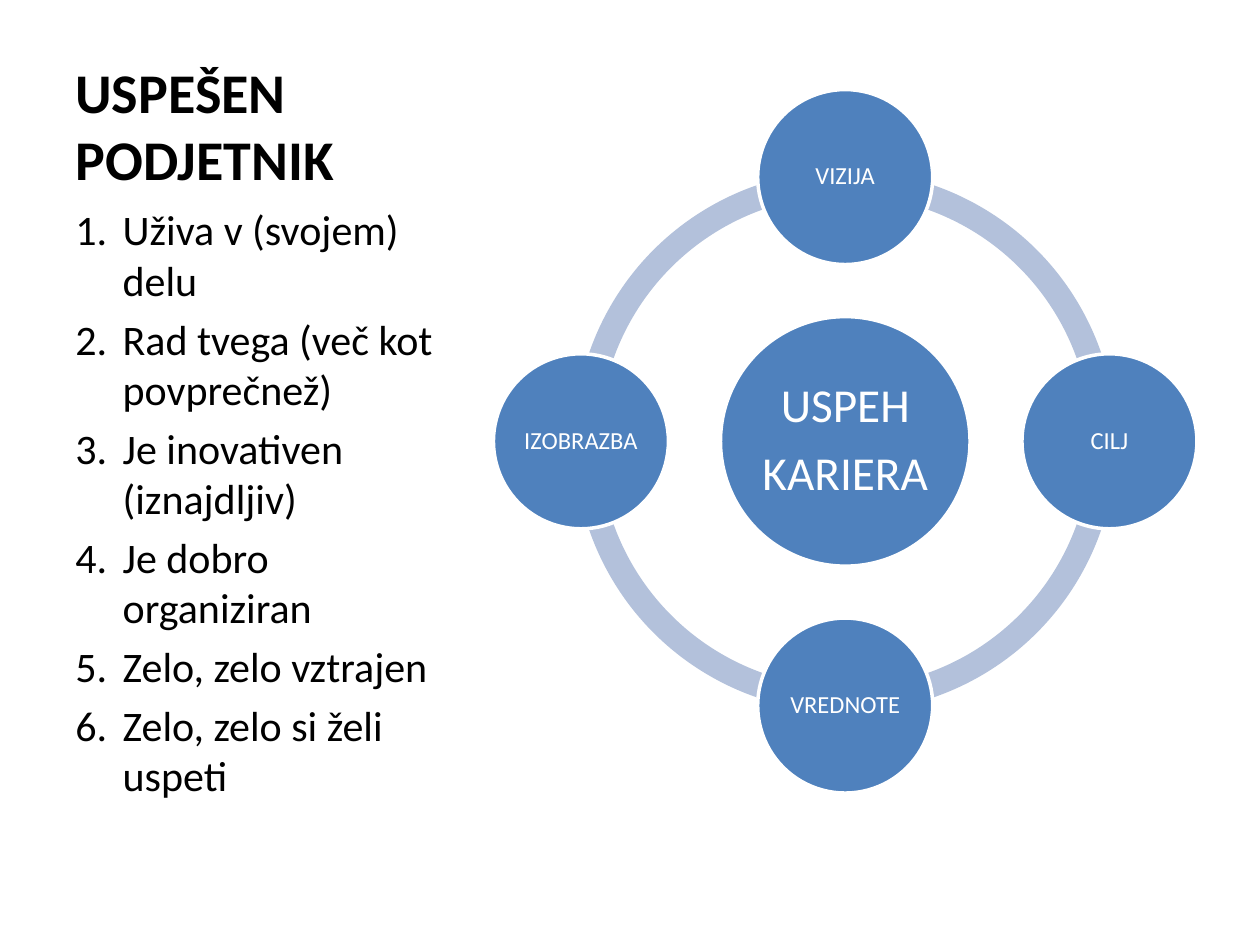
from dataclasses import dataclass
from math import cos, sin, radians

from lxml.etree import SubElement
from pptx import Presentation
from pptx.dml.color import RGBColor as RGB
from pptx.enum.shapes import MSO_SHAPE as SHAPE
from pptx.enum.text import MSO_ANCHOR as ANCHOR, PP_ALIGN as ALIGN
from pptx.oxml.ns import qn
from pptx.util import Pt


@dataclass(frozen=True)
class Theme:
    font: str = "Calibri"
    ink: RGB = RGB(0x00, 0x00, 0x00)
    paper: RGB = RGB(0xFF, 0xFF, 0xFF)
    circle: RGB = RGB(0x4F, 0x81, 0xBD)
    ring: RGB = RGB(0xB3, 0xC1, 0xDB)
    title: int = 32
    body: int = 24
    hub: int = 27
    node: int = 14


THEME = Theme()

TITLE = "USPEŠEN PODJETNIK"
TRAITS = [
    "Uživa v (svojem) delu",
    "Rad tvega (več kot povprečnež)",
    "Je inovativen (iznajdljiv)",
    "Je dobro organiziran",
    "Zelo, zelo vztrajen",
    "Zelo, zelo si želi uspeti",
]
HUB = ["USPEH", "KARIERA"]
NODES = ["VIZIJA", "CILJ", "VREDNOTE", "IZOBRAZBA"]  # clockwise from the top

# Diagram geometry, in points
CX, CY = 483, 252.2
ORBIT = 151
RING_SIZE, HUB_SIZE, NODE_SIZE = 309.6, 142.6, 100
QUARTER, FULL_TURN = 54, 216  # block arc angle units


def write(tf, lines, *, size, color=THEME.ink, bold=False, align=ALIGN.LEFT,
          before=0, after=0, spacing=1.0, numbered=False):
    """Fill a text frame, one paragraph per line."""
    tf.word_wrap = True
    for i, line in enumerate(lines):
        p = tf.paragraphs[0] if i == 0 else tf.add_paragraph()
        p.alignment = align
        p.line_spacing = spacing
        p.space_before, p.space_after = Pt(before), Pt(after)
        if numbered:
            number(p)
        r = p.add_run()
        r.text = line
        r.font.name, r.font.size, r.font.bold = THEME.font, Pt(size), bold
        r.font.color.rgb = color


def number(p, indent=27):
    """Give a paragraph an automatic number with a hanging indent."""
    pPr = p._p.get_or_add_pPr()
    pPr.set("marL", str(Pt(indent)))
    pPr.set("indent", str(-Pt(indent)))
    SubElement(pPr, qn("a:buFont"), typeface="+mj-lt")
    SubElement(pPr, qn("a:buAutoNum"), type="arabicPeriod")


def add_text(s, x, y, w, h, lines, anchor=ANCHOR.TOP, **fmt):
    tf = s.shapes.add_textbox(Pt(x), Pt(y), Pt(w), Pt(h)).text_frame
    tf.vertical_anchor = anchor
    write(tf, lines, **fmt)


def add_centred(s, kind, cx, cy, size, fill):
    """Add a square-framed shape around a centre point."""
    sp = s.shapes.add_shape(kind, Pt(cx - size / 2), Pt(cy - size / 2),
                            Pt(size), Pt(size))
    sp.shadow.inherit = False
    sp.fill.solid()
    sp.fill.fore_color.rgb = fill
    return sp


def add_arc(s, start):
    sp = add_centred(s, SHAPE.BLOCK_ARC, CX, CY, RING_SIZE, THEME.ring)
    sp.line.fill.background()
    sp.adjustments[0] = start
    sp.adjustments[1] = (start + QUARTER) % FULL_TURN
    sp.adjustments[2] = 0.046


def add_circle(s, cx, cy, diameter, lines, size, inset):
    sp = add_centred(s, SHAPE.OVAL, cx, cy, diameter, THEME.circle)
    sp.line.color.rgb = THEME.paper
    sp.line.width = Pt(2)
    tf = sp.text_frame
    tf.vertical_anchor = ANCHOR.MIDDLE
    tf.margin_left = tf.margin_right = Pt(inset)
    tf.margin_top = tf.margin_bottom = Pt(inset)
    write(tf, lines, size=size, color=THEME.paper, align=ALIGN.CENTER,
          after=0.35 * size, spacing=0.9)


def main():
    prs = Presentation()
    prs.slide_width, prs.slide_height = Pt(720), Pt(540)
    s = prs.slides.add_slide(prs.slide_layouts[6])

    # Title and numbered traits
    add_text(s, 36, 21.5, 237, 91.5, [TITLE], anchor=ANCHOR.BOTTOM,
             size=THEME.title, bold=True)
    add_text(s, 36, 113, 237, 369.4, TRAITS, size=THEME.body,
             before=0.2 * THEME.body, numbered=True)

    # Ring of four arcs
    for start in range(0, FULL_TURN, QUARTER):
        add_arc(s, start)

    # Hub and the circles around it
    add_circle(s, CX, CY, HUB_SIZE, HUB, THEME.hub, inset=2.7)
    for i, label in enumerate(NODES):
        angle = radians(90 * i - 90)
        add_circle(s, CX + ORBIT * cos(angle), CY + ORBIT * sin(angle),
                   NODE_SIZE, [label], THEME.node, inset=1.4)

    prs.save("out.pptx")


if __name__ == "__main__":
    main()
